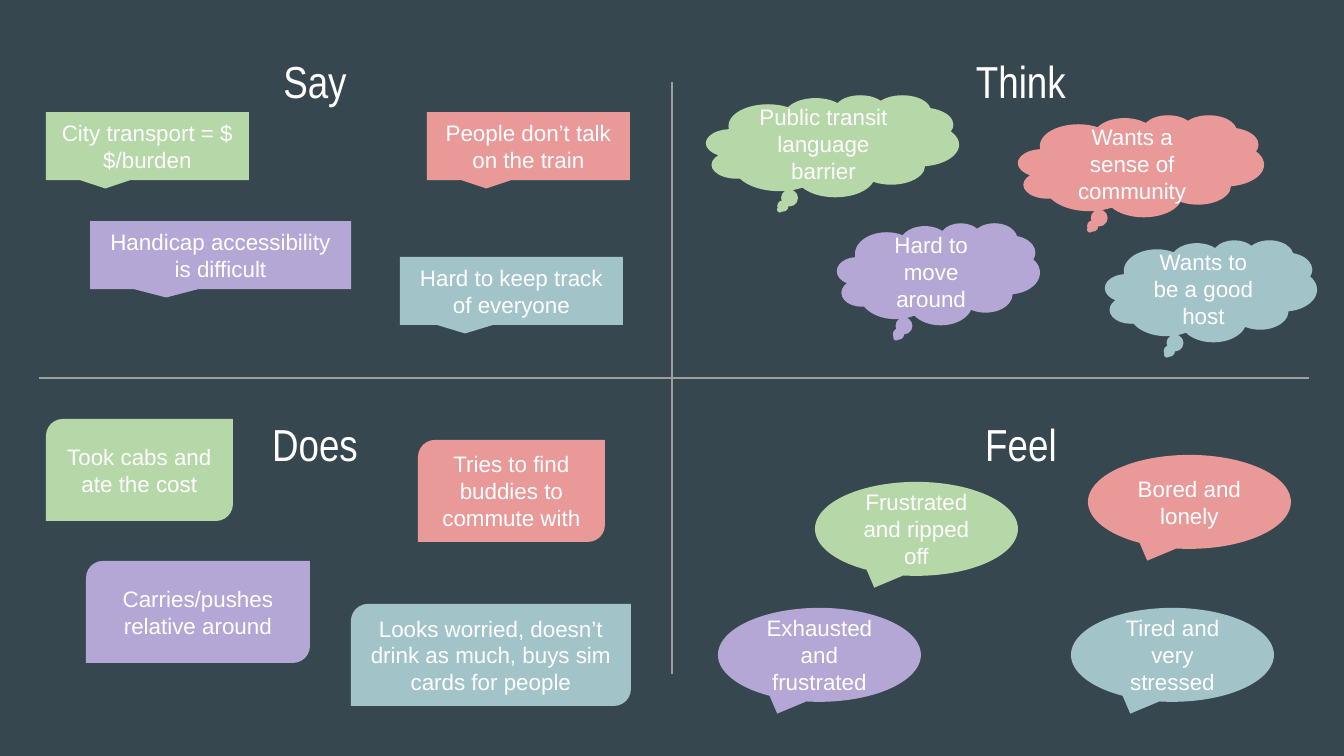
from dataclasses import dataclass

from lxml.etree import SubElement
from pptx import Presentation
from pptx.dml.color import RGBColor
from pptx.enum.shapes import MSO_CONNECTOR, MSO_SHAPE
from pptx.enum.text import MSO_ANCHOR, PP_ALIGN
from pptx.oxml.ns import qn
from pptx.util import Emu, Inches, Pt

SCALE = Inches(10) / 1344


def px(length):
    return Emu(round(length * SCALE))


@dataclass(frozen=True)
class Theme:
    background: str = "37474F"
    axis: str = "9E9E9E"
    text: str = "FFFFFF"
    green: str = "B6D7A8"
    red: str = "EA9999"
    purple: str = "B4A7D6"
    blue: str = "A2C4C9"
    title_font: str = "Arial Narrow"
    note_font: str = "Arial"
    title_size: int = 24
    note_size: int = 12
    axis_width: float = 0.75


def write_text(shape, text, *, font, size, color, anchor=MSO_ANCHOR.TOP):
    frame = shape.text_frame
    frame.word_wrap = True
    frame.vertical_anchor = anchor
    frame.margin_left = frame.margin_right = Inches(0.1)
    frame.margin_top = frame.margin_bottom = Inches(0.1)
    paragraph = frame.paragraphs[0]
    paragraph.alignment = PP_ALIGN.CENTER
    run = paragraph.add_run()
    run.text = text
    run.font.name = font
    run.font.size = Pt(size)
    run.font.color.rgb = RGBColor.from_string(color)


class EmpathyMap:
    def __init__(self, slide, theme):
        self.slide = slide
        self.theme = theme
        fill = slide.background.fill
        fill.solid()
        fill.fore_color.rgb = RGBColor.from_string(theme.background)

    def axis(self, *ends):
        line = self.slide.shapes.add_connector(MSO_CONNECTOR.STRAIGHT, *map(px, ends))
        line.line.color.rgb = RGBColor.from_string(self.theme.axis)
        line.line.width = Pt(self.theme.axis_width)
        SubElement(line._element.spPr, qn("a:effectLst"))

    def title(self, text, center, top, width):
        box = self.slide.shapes.add_textbox(
            px(center - width // 2), px(top), px(width), px(67))
        write_text(box, text, font=self.theme.title_font,
                   size=self.theme.title_size, color=self.theme.text)

    def note(self, text, color, kind, adjustments, left, top, width, height):
        shape = self.slide.shapes.add_shape(
            kind, px(left), px(top), px(width), px(height))
        shape.shadow.inherit = False
        for index, value in enumerate(adjustments):
            shape.adjustments[index] = value
        shape.fill.solid()
        shape.fill.fore_color.rgb = RGBColor.from_string(color)
        shape.line.fill.background()
        write_text(shape, text, font=self.theme.note_font, size=self.theme.note_size,
                   color=self.theme.text, anchor=MSO_ANCHOR.MIDDLE)


def main():
    presentation = Presentation()
    presentation.slide_width = px(1344)
    presentation.slide_height = px(756)
    slide = presentation.slides.add_slide(presentation.slide_layouts[6])
    theme = Theme()
    empathy_map = EmpathyMap(slide, theme)

    # Axes between the quadrants
    empathy_map.axis(672, 82, 672, 674)
    empathy_map.axis(1309, 378, 39, 378)

    # Quadrant titles
    for text, center, top, width in [
        ("Say", 315, 40, 118),
        ("Feel", 1021, 403, 118),
        ("Does", 315, 403, 118),
        ("Think", 1021, 40, 134),
    ]:
        empathy_map.title(text, center, top, width)

    # Notes by quadrant: shape, adjustments, height, then text, color, left, top, width
    tail = (-0.208, 0.625)
    quadrants = [
        # Say
        (MSO_SHAPE.ROUNDED_RECTANGULAR_CALLOUT, (*tail, 0), 68, [
            ("Hard to keep track of everyone", theme.blue, 400, 257, 223),
            ("City transport = $$/burden", theme.green, 46, 112, 203),
            ("Handicap accessibility is difficult", theme.purple, 90, 221, 261),
            ("People don’t talk on the train", theme.red, 427, 112, 203),
        ]),
        # Think
        (MSO_SHAPE.CLOUD_CALLOUT, tail, 102, [
            ("Public transit language barrier", theme.green, 706, 95, 253),
            ("Wants to be a good host", theme.blue, 1105, 240, 212),
            ("Hard to move around", theme.purple, 837, 223, 203),
            ("Wants a sense of community", theme.red, 1018, 115, 246),
        ]),
        # Does
        (MSO_SHAPE.ROUND_2_DIAG_RECTANGLE, (0.167, 0), 102, [
            ("Took cabs and ate the cost", theme.green, 46, 419, 187),
            ("Carries/pushes relative around", theme.purple, 86, 561, 224),
            ("Looks worried, doesn’t drink as much, buys sim cards for people",
             theme.blue, 351, 604, 280),
            ("Tries to find buddies to commute with", theme.red, 418, 440, 187),
        ]),
        # Feel
        (MSO_SHAPE.OVAL_CALLOUT, tail, 94, [
            ("Frustrated and ripped off", theme.green, 815, 482, 203),
            ("Exhausted and frustrated", theme.purple, 718, 608, 203),
            ("Tired and very stressed", theme.blue, 1071, 608, 203),
            ("Bored and lonely", theme.red, 1088, 455, 203),
        ]),
    ]
    for kind, adjustments, height, notes in quadrants:
        for text, color, left, top, width in notes:
            empathy_map.note(text, color, kind, adjustments, left, top, width, height)

    presentation.save("out.pptx")


if __name__ == "__main__":
    main()
